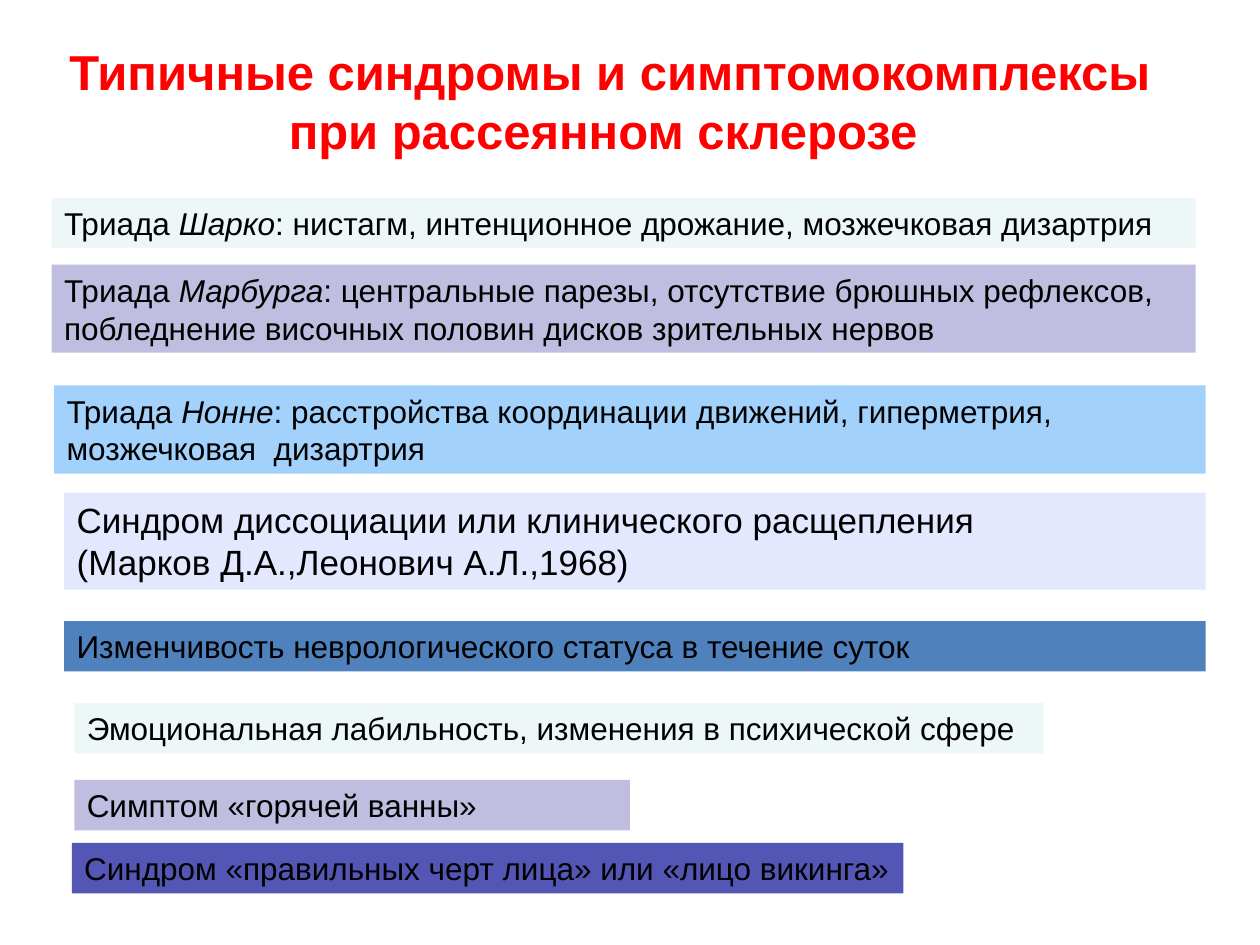
from dataclasses import dataclass

from pptx import Presentation
from pptx.dml.color import RGBColor
from pptx.enum import shapes, text
from pptx.util import Inches, Pt

RED = RGBColor(0xFF, 0x00, 0x00)
BLACK = RGBColor(0x00, 0x00, 0x00)
MINT = RGBColor(0xEE, 0xF7, 0xF8)
LILAC = RGBColor(0xC0, 0xBE, 0xE0)
SKY = RGBColor(0xA2, 0xD1, 0xFC)
PALE = RGBColor(0xE3, 0xE8, 0xFF)
BLUE = RGBColor(0x4F, 0x81, 0xBD)
INDIGO = RGBColor(0x54, 0x56, 0xB6)
FONT = "Arial"


@dataclass
class Bar:
    """One syndrome; asterisks in a line enclose italic words."""
    left: float
    top: float
    width: float
    height: float
    fill: RGBColor
    lines: tuple[str, ...]
    size: int = 18
    wrap: bool = True


BARS = [
    Bar(0.41, 1.57, 9.08, 0.4, MINT,
        ("Триада *Шарко*: нистагм, интенционное дрожание, мозжечковая дизартрия",)),
    Bar(0.41, 2.1, 9.08, 0.7, LILAC,
        ("Триада *Марбурга*: центральные парезы, отсутствие брюшных рефлексов, "
         "побледнение височных половин дисков зрительных нервов",)),
    Bar(0.43, 3.06, 9.14, 0.7, SKY,
        ("Триада *Нонне*: расстройства координации движений, гиперметрия, "
         "мозжечковая  дизартрия",)),
    Bar(0.51, 3.91, 9.06, 0.77, PALE,
        ("Синдром диссоциации или клинического расщепления",
         "(Марков Д.А.,Леонович А.Л.,1968)"), size=20),
    Bar(0.51, 4.93, 9.06, 0.4, BLUE,
        ("Изменчивость неврологического статуса в течение суток",)),
    Bar(0.59, 5.58, 7.69, 0.4, MINT,
        ("Эмоциональная лабильность, изменения в психической сфере",)),
    Bar(0.59, 6.19, 4.41, 0.4, LILAC, ("Симптом «горячей ванны»",)),
    Bar(0.57, 6.69, 6.6, 0.4, INDIGO,
        ("Синдром «правильных черт лица» или «лицо викинга»",), wrap=False),
]


def write(para, line: str, size: int, color: RGBColor, align, bold: bool = False) -> None:
    para.alignment = align
    font = para.font
    font.name, font.size, font.bold = FONT, Pt(size), bold
    font.color.rgb = color
    for i, part in enumerate(line.split("*")):
        run = para.add_run()
        run.text = part
        if i % 2:
            run.font.italic = True


def draw_title(slide) -> None:
    box = slide.shapes.add_textbox(Inches(0.35), Inches(0.28), Inches(8.98), Inches(1.03))
    frame = box.text_frame
    frame.word_wrap = True
    write(frame.paragraphs[0],
          "Типичные синдромы и симптомокомплексы при рассеянном склерозе ",
          28, RED, text.PP_ALIGN.CENTER, bold=True)


def draw_bar(slide, bar: Bar) -> None:
    shape = slide.shapes.add_shape(
        shapes.MSO_SHAPE.RECTANGLE, Inches(bar.left), Inches(bar.top),
        Inches(bar.width), Inches(bar.height))
    shape.shadow.inherit = False
    shape.fill.solid()
    shape.fill.fore_color.rgb = bar.fill
    shape.line.fill.background()
    frame = shape.text_frame
    frame.word_wrap = bar.wrap
    frame.auto_size = text.MSO_AUTO_SIZE.SHAPE_TO_FIT_TEXT
    frame.vertical_anchor = text.MSO_ANCHOR.TOP
    for i, line in enumerate(bar.lines):
        para = frame.add_paragraph() if i else frame.paragraphs[0]
        write(para, line, bar.size, BLACK, text.PP_ALIGN.LEFT)


def main() -> None:
    deck = Presentation()
    deck.slide_width, deck.slide_height = Inches(10), Inches(7.5)
    slide = deck.slides.add_slide(deck.slide_layouts[6])
    # Heading
    draw_title(slide)
    # Syndromes
    for bar in BARS:
        draw_bar(slide, bar)
    deck.save("out.pptx")


if __name__ == "__main__":
    main()
